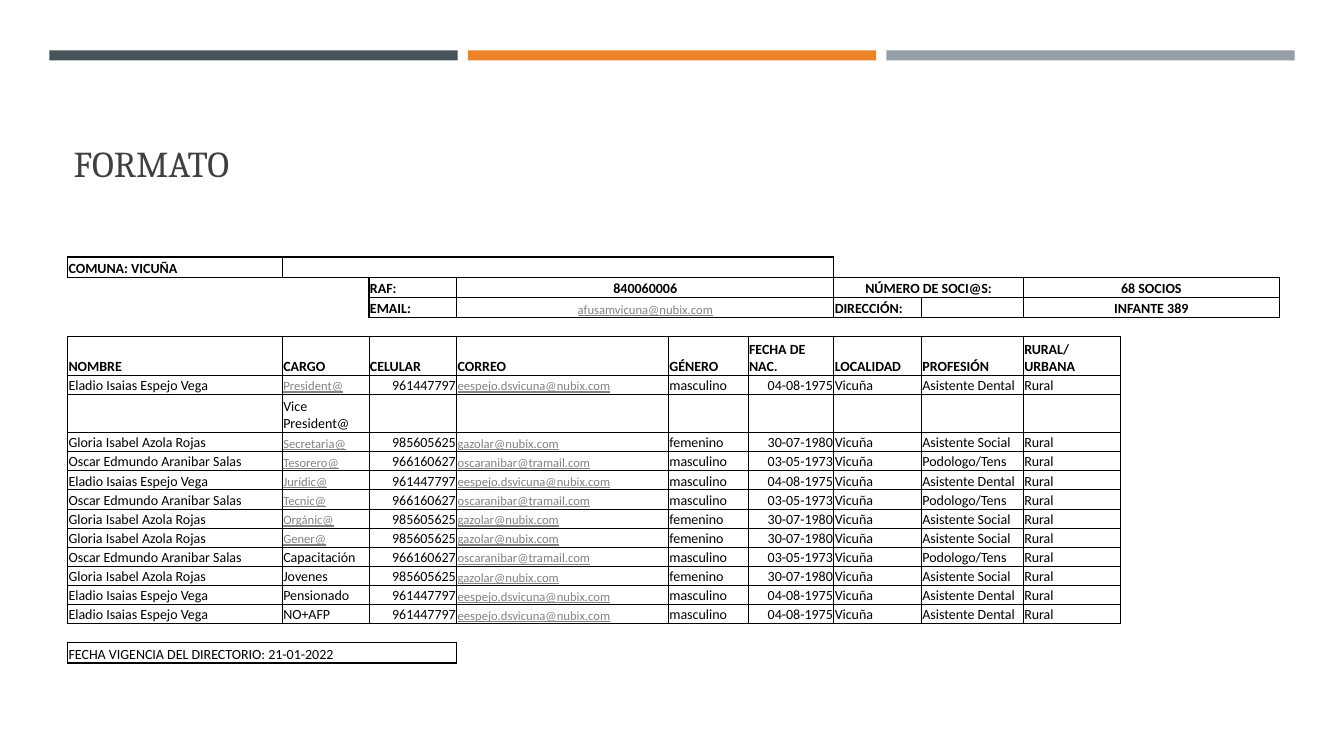
from dataclasses import dataclass
from typing import Optional

from lxml import etree
from pptx import Presentation
from pptx.dml.color import RGBColor
from pptx.enum.shapes import MSO_SHAPE
from pptx.enum.text import MSO_ANCHOR, PP_ALIGN
from pptx.oxml.ns import qn
from pptx.util import Inches, Pt

LEFT, CENTER, RIGHT = PP_ALIGN.LEFT, PP_ALIGN.CENTER, PP_ALIGN.RIGHT
BOTTOM = MSO_ANCHOR.BOTTOM
RECTANGLE = MSO_SHAPE.RECTANGLE
TITLE_ONLY = 5
PLAIN_TABLE_STYLE = "{2D5ABB26-0587-4C30-8999-92F81FD0307C}"


@dataclass(frozen=True)
class Theme:
    heading_font: str = "Cambria"
    body_font: str = "Calibri"
    title_size: int = 26
    body_size: int = 10
    link_size: int = 9
    bars: tuple = ("465359", "ED8428", "969FA7")
    title: str = "404040"
    ink: str = "000000"
    link: str = "828282"
    frame_line: float = 1
    grid_line: float = 0.5


@dataclass(frozen=True)
class Entry:
    """A framed entry of the form, over one or more columns."""
    row: int
    col: int
    text: str
    span: int = 1
    align: int = LEFT
    bold: bool = True
    link: bool = False
    merged: bool = True
    line: float = Theme.frame_line


@dataclass(frozen=True)
class Person:
    name: str
    phone: str
    email: str
    gender: str
    birth: str
    profession: str


@dataclass(frozen=True)
class Post:
    title: str
    holder: Optional[Person]
    link: bool = False


THEME = Theme()

# People and the posts they hold
ELADIO = Person("Eladio Isaias Espejo Vega", "961447797", "eespejo.dsvicuna@nubix.com",
                "masculino", "04-08-1975", "Asistente Dental")
GLORIA = Person("Gloria Isabel Azola Rojas", "985605625", "gazolar@nubix.com",
                "femenino", "30-07-1980", "Asistente Social")
OSCAR = Person("Oscar Edmundo Aranibar Salas", "966160627", "oscaranibar@tramail.com",
               "masculino", "03-05-1973", "Podologo/Tens")
POSTS = [
    Post("President@", ELADIO, link=True),
    Post("Vice President@", None),
    Post("Secretaria@", GLORIA, link=True),
    Post("Tesorero@", OSCAR, link=True),
    Post("Jurídic@", ELADIO, link=True),
    Post("Tecnic@", OSCAR, link=True),
    Post("Orgánic@", GLORIA, link=True),
    Post("Gener@", GLORIA, link=True),
    Post("Capacitación", OSCAR),
    Post("Jovenes", GLORIA),
    Post("Pensionado", ELADIO),
    Post("NO+AFP", ELADIO),
]
HEADERS = ["NOMBRE", "CARGO", "CELULAR", "CORREO", "GÉNERO", "FECHA DE NAC.",
           "LOCALIDAD", "PROFESIÓN", "RURAL/\nURBANA"]

# Table geometry
COLUMN_WIDTHS = [2.13, 0.86, 0.87, 2.1, 0.79, 0.85, 0.87, 1.01, 0.96, 0.79, 0.79]
HEADER_ROW = 4
FIRST_POST_ROW = HEADER_ROW + 1
VALIDITY_ROW = FIRST_POST_ROW + len(POSTS) + 1
ROW_HEIGHTS = ([0.2] * 3 + [0.19, 0.38]
               + [0.19 if post.holder else 0.38 for post in POSTS] + [0.19, 0.2])

# Entries above and below the directory
FORM_ENTRIES = [
    Entry(0, 0, "COMUNA: VICUÑA"),
    Entry(0, 1, "", span=5),
    Entry(1, 2, "RAF:"),
    Entry(1, 3, "840060006", span=3, align=CENTER),
    Entry(1, 6, "NÚMERO DE SOCI@S:", span=2, align=CENTER),
    Entry(1, 8, "68 SOCIOS", span=3, align=CENTER),
    Entry(2, 2, "EMAIL:"),
    Entry(2, 3, "afusamvicuna@nubix.com", span=3, align=CENTER, bold=False, link=True),
    Entry(2, 6, "DIRECCIÓN:", span=2, merged=False),
    Entry(2, 8, "INFANTE 389", span=3, align=CENTER),
    Entry(VALIDITY_ROW, 0, "FECHA VIGENCIA DEL DIRECTORIO: 21-01-2022", span=3, bold=False),
]


def directory_entries() -> list[Entry]:
    entries = [Entry(HEADER_ROW, col, header, line=THEME.grid_line)
               for col, header in enumerate(HEADERS)]
    for row, post in enumerate(POSTS, FIRST_POST_ROW):
        who = post.holder
        values = ["", post.title] + [""] * 7
        if who:
            values = [who.name, post.title, who.phone, who.email, who.gender,
                      who.birth, "Vicuña", who.profession, "Rural"]
        for col, value in enumerate(values):
            entries.append(Entry(
                row, col, value, bold=False, line=THEME.grid_line,
                align=RIGHT if HEADERS[col] in ("CELULAR", "FECHA DE NAC.") else LEFT,
                link=HEADERS[col] == "CORREO" or (HEADERS[col] == "CARGO" and post.link)))
    return entries


def set_border(cell, edges: str, width: float) -> None:
    properties = cell._tc.get_or_add_tcPr()
    for edge in edges:
        line = etree.SubElement(properties, qn(f"a:ln{edge}"), w=str(Pt(width)))
        fill = etree.SubElement(line, qn("a:solidFill"))
        etree.SubElement(fill, qn("a:srgbClr"), val=THEME.ink)


def write_text(cell, entry: Entry) -> None:
    paragraph = cell.text_frame.paragraphs[0]
    paragraph.alignment = entry.align
    for index, words in enumerate(entry.text.split("\n")):
        if index:
            paragraph.add_line_break()
        run = paragraph.add_run()
        run.text = words
        font = run.font
        font.name = THEME.body_font
        font.size = Pt(THEME.link_size if entry.link else THEME.body_size)
        font.bold = entry.bold
        font.underline = entry.link
        font.color.rgb = RGBColor.from_string(THEME.link if entry.link else THEME.ink)


def draw_entry(table, entry: Entry) -> None:
    first, last = entry.col, entry.col + entry.span - 1
    origin = table.cell(entry.row, first)
    merged = entry.merged and entry.span > 1
    if merged:
        origin.merge(table.cell(entry.row, last))
    for col in range(first, last + 1):
        left = "L" if col == first else ""
        right = "R" if col == last or (merged and col == first) else ""
        set_border(table.cell(entry.row, col), left + right + "TB", entry.line)
    if entry.text:
        write_text(origin, entry)


def finish_cell(cell) -> None:
    cell.margin_left = cell.margin_right = cell.margin_top = Inches(0.01)
    cell.margin_bottom = Inches(0)
    cell.vertical_anchor = BOTTOM
    cell.fill.background()
    if not cell.text_frame.text:  # keeps empty rows low
        etree.SubElement(cell.text_frame.paragraphs[0]._p, qn("a:endParaRPr"),
                         sz=str(THEME.body_size * 100))


def draw_bars(slide) -> None:
    for index, color in enumerate(THEME.bars):
        bar = slide.shapes.add_shape(RECTANGLE, Inches(0.49 + 4.15 * index), Inches(0.5),
                                     Inches(4.05), Inches(0.1))
        bar.shadow.inherit = False
        bar.fill.solid()
        bar.fill.fore_color.rgb = RGBColor.from_string(color)
        bar.line.fill.background()


def draw_title(slide, text: str) -> None:
    title = slide.shapes.title
    title.left, title.top = Inches(0.63), Inches(0.8)
    title.width, title.height = Inches(12.06), Inches(1.08)
    title.text_frame.vertical_anchor = BOTTOM
    paragraph = title.text_frame.paragraphs[0]
    paragraph.alignment = LEFT
    run = paragraph.add_run()
    run.text = text
    run.font.name = THEME.heading_font
    run.font.size = Pt(THEME.title_size)
    run.font.color.rgb = RGBColor.from_string(THEME.title)


def draw_form(slide) -> None:
    frame = slide.shapes.add_table(len(ROW_HEIGHTS), len(COLUMN_WIDTHS), Inches(0.67),
                                   Inches(2.55), Inches(12), Inches(3.99))
    table = frame.table
    table.first_row = table.horz_banding = False
    table._tbl.tblPr.find(qn("a:tableStyleId")).text = PLAIN_TABLE_STYLE
    for column, width in zip(table.columns, COLUMN_WIDTHS):
        column.width = Inches(width)
    for row, height in zip(table.rows, ROW_HEIGHTS):
        row.height = Inches(height)
    for entry in FORM_ENTRIES + directory_entries():
        draw_entry(table, entry)
    for cell in table.iter_cells():
        finish_cell(cell)


def main() -> None:
    deck = Presentation()
    deck.slide_width, deck.slide_height = Inches(13.33), Inches(7.5)
    slide = deck.slides.add_slide(deck.slide_layouts[TITLE_ONLY])
    draw_bars(slide)
    draw_title(slide, "FORMATO")
    draw_form(slide)
    deck.save("out.pptx")


if __name__ == "__main__":
    main()
